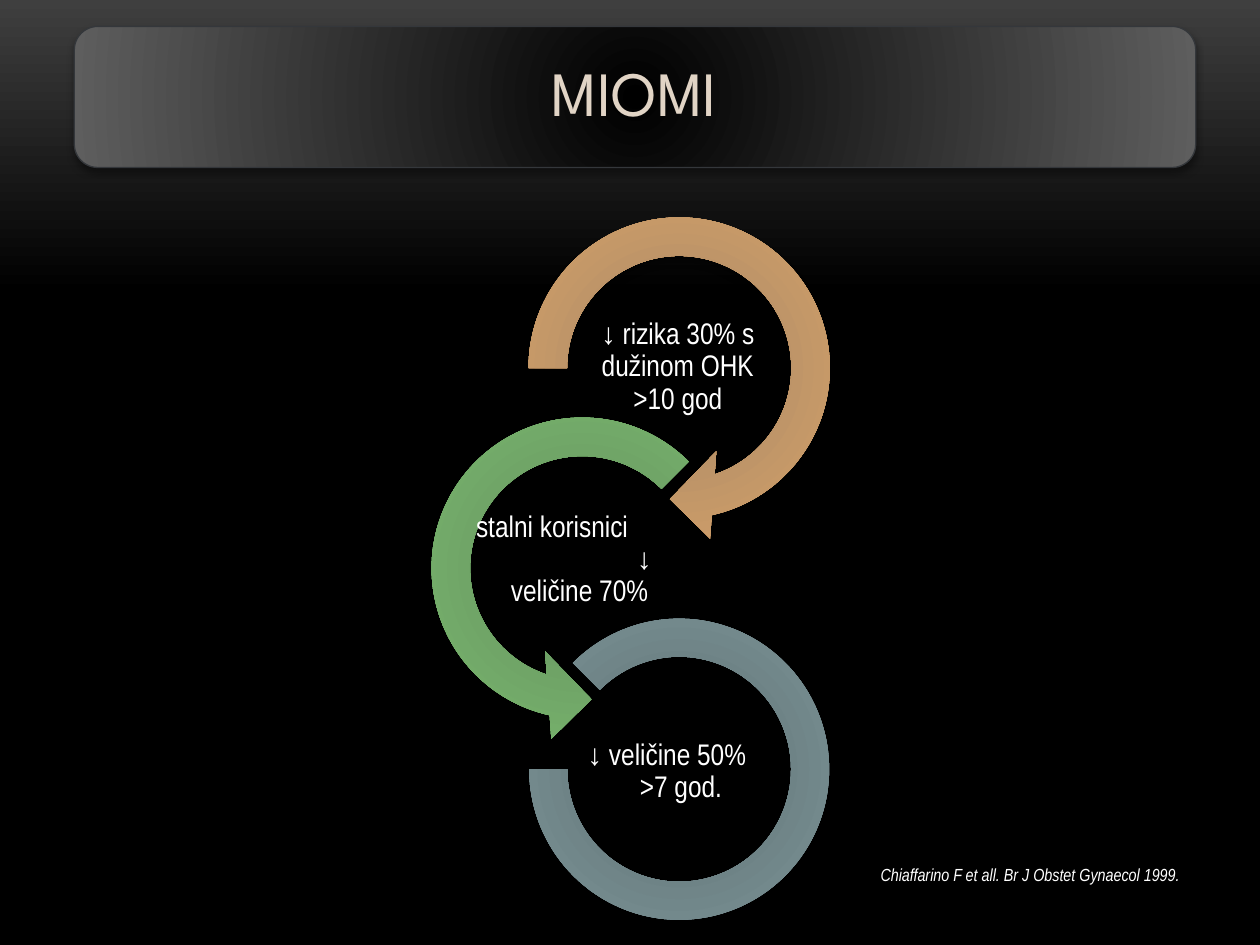
from lxml import etree
from pptx import Presentation
from pptx import util as u
from pptx.dml.color import RGBColor
from pptx.enum import shapes, text
from pptx.oxml.ns import qn

KIND = shapes.MSO_SHAPE
MID = text.MSO_ANCHOR.MIDDLE
LEFT, CENTER = text.PP_ALIGN.LEFT, text.PP_ALIGN.CENTER


def tint(code):
    return RGBColor.from_string(code)


def apply(item, values):
    for name, value in values.items():
        setattr(item, name, value)


def blend(fill, stops):
    fill.gradient()
    for stop, (place, code) in zip(fill.gradient_stops, stops):
        stop.position = place
        stop.color.rgb = tint(code)


class Deck:
    narrow = {"name": "Arial Narrow", "size": u.Pt(17)}
    head = {"name": "League Spartan", "size": u.Pt(36)}
    cite = {"name": "Arial Narrow", "size": u.Pt(10), "italic": True}

    def __init__(self):
        self.show = Presentation()
        apply(self.show, {"slide_width": u.Pt(720), "slide_height": u.Pt(540)})
        self.slide = self.show.slides.add_slide(self.show.slide_layouts[6])

    def ground(self, stops):
        fill = self.slide.background.fill
        blend(fill, stops)
        fill.gradient_angle = 270

    def shape(self, kind, area, inner, outer, adjust=(), drop=3.4, edge=None):
        item = self.slide.shapes.add_shape(kind, *map(u.Pt, area))
        for spot, value in enumerate(adjust):
            item.adjustments[spot] = value
        blend(item.fill, [(0, inner), (1, outer)])
        props = item._element.spPr
        grad = props.find(qn("a:gradFill"))
        grad.remove(grad.find(qn("a:lin")))
        round_ = etree.SubElement(grad, qn("a:path"), {"path": "circle"})
        etree.SubElement(round_, qn("a:fillToRect"), dict.fromkeys("ltrb", "100000"))
        if edge:
            item.line.color.rgb = tint(edge)
            item.line.width = u.Pt(0.75)
        else:
            item.line.fill.background()
        self.shade(item, drop)

    def shade(self, item, drop):
        item.shadow.inherit = False
        effect = item._element.spPr.find(qn("a:effectLst"))
        cast = etree.SubElement(effect, qn("a:outerShdw"), {
            "blurRad": str(u.Pt(4)), "dist": str(u.Pt(drop)),
            "dir": "5400000", "rotWithShape": "0"})
        color = etree.SubElement(cast, qn("a:srgbClr"), {"val": "000000"})
        etree.SubElement(color, qn("a:alpha"), {"val": "40000"})

    def words(self, area, lines, font, color="FFFFFF", pad=0.72, **frame):
        box = self.slide.shapes.add_textbox(*map(u.Pt, area)).text_frame
        sides = ("left", "top", "right", "bottom")
        apply(box, {f"margin_{side}": u.Pt(pad) for side in sides})
        apply(box, {"word_wrap": True, "vertical_anchor": MID, **frame})
        for spot, (line, align, indent) in enumerate(lines):
            para = box.add_paragraph() if spot else box.paragraphs[0]
            apply(para, {"alignment": align, "line_spacing": 0.9})
            if indent:
                para._p.get_or_add_pPr().set("marL", str(u.Pt(indent)))
            run = para.add_run()
            run.text = line
            apply(run.font, font)
            run.font.color.rgb = tint(color)

    def save(self):
        self.show.save("out.pptx")


def main():
    deck = Deck()
    deck.ground([(0, "3F3F3F"), (0.31, "000000")])
    deck.shape(KIND.ROUNDED_RECTANGLE, (42.5, 15.1, 640.8, 80.6),
               "000000", "5E5E5E", drop=2, edge="34373B")
    deck.words((46.1, 18.7, 632.9, 72.7), [("MIOMI", CENTER, 0)],
               deck.head, "E1D4C5", pad=10.8)
    deck.words((496.1, 491, 187.2, 19.4),
               [("Chiaffarino F et all. Br J Obstet Gynaecol 1999.", LEFT, 0)],
               deck.cite, pad=7.2, word_wrap=False)

    rings = [
        (KIND.CIRCULAR_ARROW, (288, 110.2, 200.2, 200.2), "A88966", "D9A36A",
         (0.11, 11.42, 45, 108, 0.125), (331.9, 182.2, 110.9, 55.4),
         [("↓ rizika 30% s dužinom OHK >10 god", CENTER, 0)]),
        (KIND.LEFT_CIRCULAR_ARROW, (232.6, 224.6, 200.2, 200.2), "679060", "7ABC6F",
         (0.11, 11.42, 63, 189, 0.125), (269.3, 292.3, 123.8, 55.4),
         [("stalni korisnici", LEFT, 2), ("↓", LEFT, 94), ("veličine 70%", CENTER, 0)]),
        (KIND.BLOCK_ARC, (302.4, 353.5, 171.4, 172.1), "607073", "7B9397",
         (135, 108, 0.127), (331.9, 413.3, 110.9, 55.4),
         [("↓ veličine 50%", LEFT, 3), (">7 god.", LEFT, 33)]),
    ]
    for kind, area, inner, outer, adjust, place, lines in rings:
        deck.shape(kind, area, inner, outer, adjust)
        deck.words(place, lines, deck.narrow)
    deck.save()


if __name__ == "__main__":
    main()
